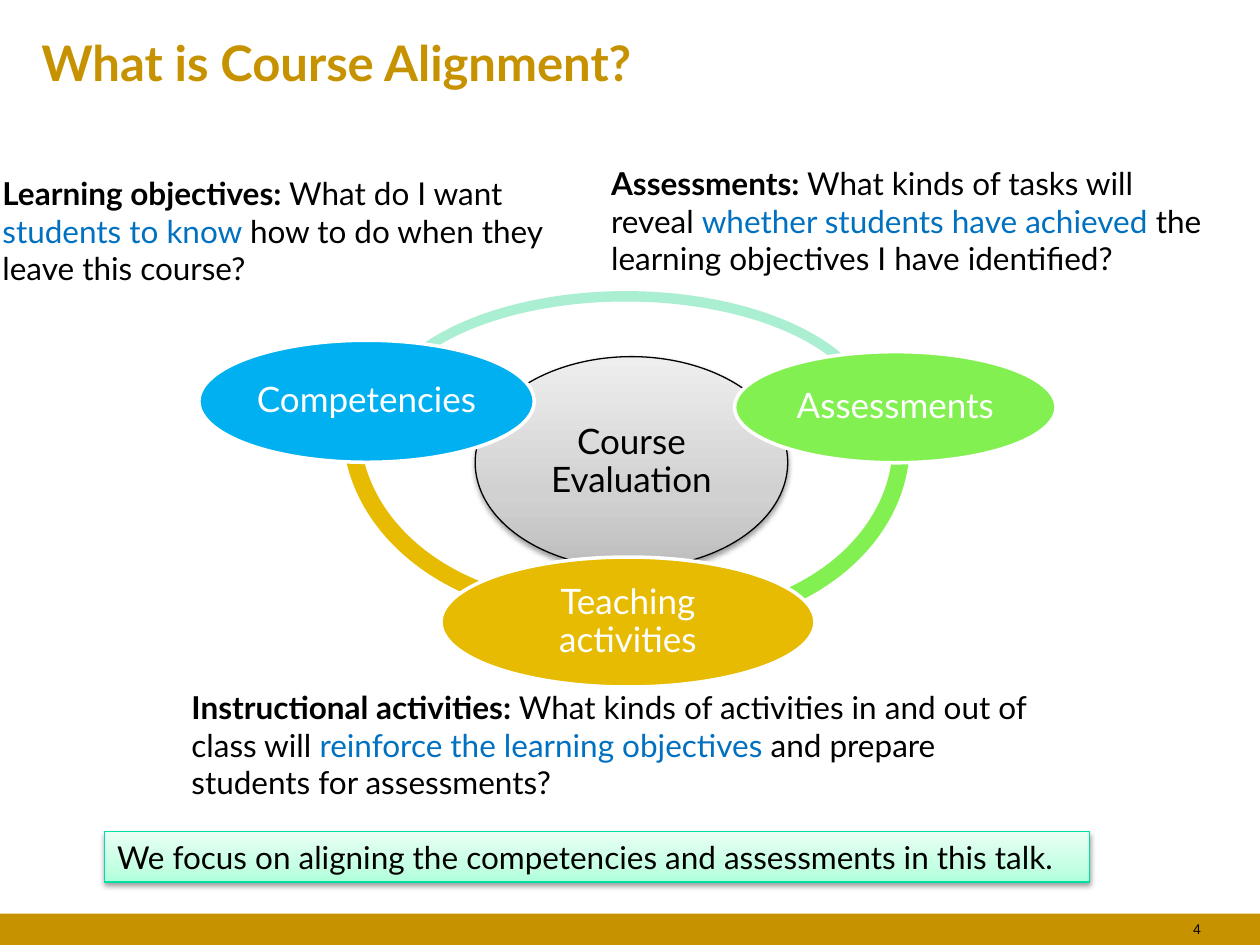
from copy import deepcopy

from lxml.etree import SubElement
from pptx import Presentation
from pptx.dml.color import RGBColor
from pptx.enum.shapes import MSO_SHAPE as Shape
from pptx.enum.text import MSO_ANCHOR as Anchor, PP_ALIGN as Align
from pptx.oxml.ns import qn
from pptx.util import Cm, Pt

COLORS = {
    "gold": "C69200", "black": "000000", "white": "FFFFFF", "accent": "0070C0",
    "blue": "00B0F0", "green": "83F051", "yellow": "E7BB01", "mint": "AAEFD1",
    "teal": "00DFA4",
}
MINT_STOPS = [(0, "B0FFDA"), (0.35, "C7FFE4"), (1, "EAFFF4")]
GRAY_STOPS = [(0, "BDBDBD"), (0.35, "D1D1D1"), (1, "EEEEEE")]

# Boxes are left, top, width, height in centimetres.
TITLE = ("What is Course Alignment?", (0.58, 0.53, 24.23, 1.45))
FOOTER_BOX = (0, 18.42, 25.4, 0.63)
PAGE_NUMBER = ("4", (23.47, 18.44, 0.99, 0.61))
TAKEAWAY = ("We focus on aligning the competencies and assessments in this talk.",
            (2.11, 16.76, 19.86, 1.02))
# Box, then heading, lead-in, highlighted words, ending
QUESTIONS = [
    ((3.61, 13.74, 17.78, 2.57),
     ("Instructional activities:", " What kinds of activities in and out of class will ",
      "reinforce the learning objectives", " and prepare students for assessments?")),
    ((12.07, 3.18, 12.7, 2.57),
     ("Assessments:", " What kinds of tasks will reveal ",
      "whether students have achieved", " the learning objectives I have identified?")),
    ((-0.2, 3.38, 12.7, 2.57),
     ("Learning objectives:", " What do I want ",
      "students to know ", "how to do when they leave this course?")),
]
# Box, start and end angle in degrees, thickness, colour
ARCS = [
    ((6.91, 4.83, 9.6, 7.62), 80.84, 179.44, 0.046, "yellow"),
    ((9.02, 5.23, 9.32, 7.44), 1.63, 100.9, 0.046, "green"),
    ((7.54, 5.87, 10.16, 5.23), 180.59, 0.59, 0.04, "mint"),
]
HUB = ("Course Evaluation", (9.58, 7.19, 6.3, 4.27))
PARTS = [
    ("Competencies", (4.01, 6.86, 6.76, 2.46), "blue"),
    ("Assessments", (14.81, 7.09, 6.48, 2.24), "green"),
    ("Teaching activities", (8.89, 11.23, 7.54, 2.62), "yellow"),
]


def rgb(color):
    return RGBColor.from_string(COLORS.get(color, color))


def place(box):
    return [Cm(length) for length in box]


def style(run, size, color="black", bold=False, font="Lato"):
    run.font.name, run.font.size, run.font.bold = font, Pt(size), bold
    run.font.color.rgb = rgb(color)


def add_shape(preset, box, fill=None, line=None, line_width=0.75):
    shape = slide.shapes.add_shape(preset, *place(box))
    if fill:
        shape.fill.solid()
        shape.fill.fore_color.rgb = rgb(fill)
    if line:
        shape.line.color.rgb = rgb(line)
        shape.line.width = Pt(line_width)
    else:
        shape.line.fill.background()
    shape.shadow.inherit = False
    return shape


def add_raised_shape(preset, box, stops, line):
    """Add a shape with an upward three-stop gradient and a soft shadow below."""
    shape = add_shape(preset, box, line=line)
    shape.fill.gradient()
    shape.fill.gradient_angle = 90
    properties = shape.element.spPr
    stop_list = properties.find(".//" + qn("a:gsLst"))
    stop_list.append(deepcopy(stop_list[0]))
    for stop, (position, color) in zip(shape.fill.gradient_stops, stops):
        stop.position = position
        stop.color.rgb = rgb(color)
    shadow = SubElement(properties.find(qn("a:effectLst")), qn("a:outerShdw"),
                        blurRad=str(Pt(3.1)), dist=str(Pt(1.6)), dir="5400000",
                        rotWithShape="0")
    shade = SubElement(shadow, qn("a:srgbClr"), val=COLORS["black"])
    SubElement(shade, qn("a:alpha"), val="38000")
    return shape


def write_label(shape, label, color):
    frame = shape.text_frame
    frame.text = label
    frame.word_wrap = True
    frame.vertical_anchor = Anchor.MIDDLE
    frame.margin_left = frame.margin_right = Cm(0.07)
    frame.margin_top = frame.margin_bottom = Cm(0.07)
    paragraph = frame.paragraphs[0]
    paragraph.alignment = Align.CENTER
    paragraph.line_spacing = 0.9
    style(paragraph.runs[0], 20, color)


def add_text_box(box):
    frame = slide.shapes.add_textbox(*place(box)).text_frame
    frame.word_wrap = True
    return frame.paragraphs[0]


prs = Presentation()
prs.slide_width, prs.slide_height = Cm(25.4), Cm(19.05)
slide = prs.slides.add_slide(prs.slide_layouts[5])

add_shape(Shape.RECTANGLE, FOOTER_BOX, "gold")

heading, heading_box = TITLE
title = slide.shapes.title
title.left, title.top, title.width, title.height = place(heading_box)
title.text_frame.text = heading
title.text_frame.vertical_anchor = Anchor.MIDDLE
title.text_frame.paragraphs[0].alignment = Align.LEFT
style(title.text_frame.paragraphs[0].runs[0], 28, "gold", bold=True)

message, message_box = TAKEAWAY
takeaway = add_raised_shape(Shape.RECTANGLE, message_box, MINT_STOPS, "teal")
takeaway.text_frame.text = message
takeaway.text_frame.word_wrap = True
takeaway.text_frame.vertical_anchor = Anchor.TOP
takeaway.text_frame.paragraphs[0].alignment = Align.LEFT
style(takeaway.text_frame.paragraphs[0].runs[0], 18)

for box, pieces in QUESTIONS:
    question = add_text_box(box)
    for index, piece in enumerate(pieces):
        run = question.add_run()
        run.text = piece
        style(run, 18, "accent" if index == 2 else "black", bold=index == 0)

number, number_box = PAGE_NUMBER
page_number = add_text_box(number_box)
page_number.text = number
page_number.alignment = Align.RIGHT
style(page_number.runs[0], 8, font="Arial")

for box, start, end, thickness, color in ARCS:
    arc = add_shape(Shape.BLOCK_ARC, box, color)
    # Angles are stored in 60000ths of a degree, adjustments in 100000ths.
    for index, value in enumerate((start * 0.6, end * 0.6, thickness)):
        arc.adjustments[index] = value

hub_label, hub_box = HUB
write_label(add_raised_shape(Shape.OVAL, hub_box, GRAY_STOPS, "black"), hub_label, "black")
for label, box, color in PARTS:
    write_label(add_shape(Shape.OVAL, box, color, "white", 2), label, "white")

prs.save("out.pptx")
